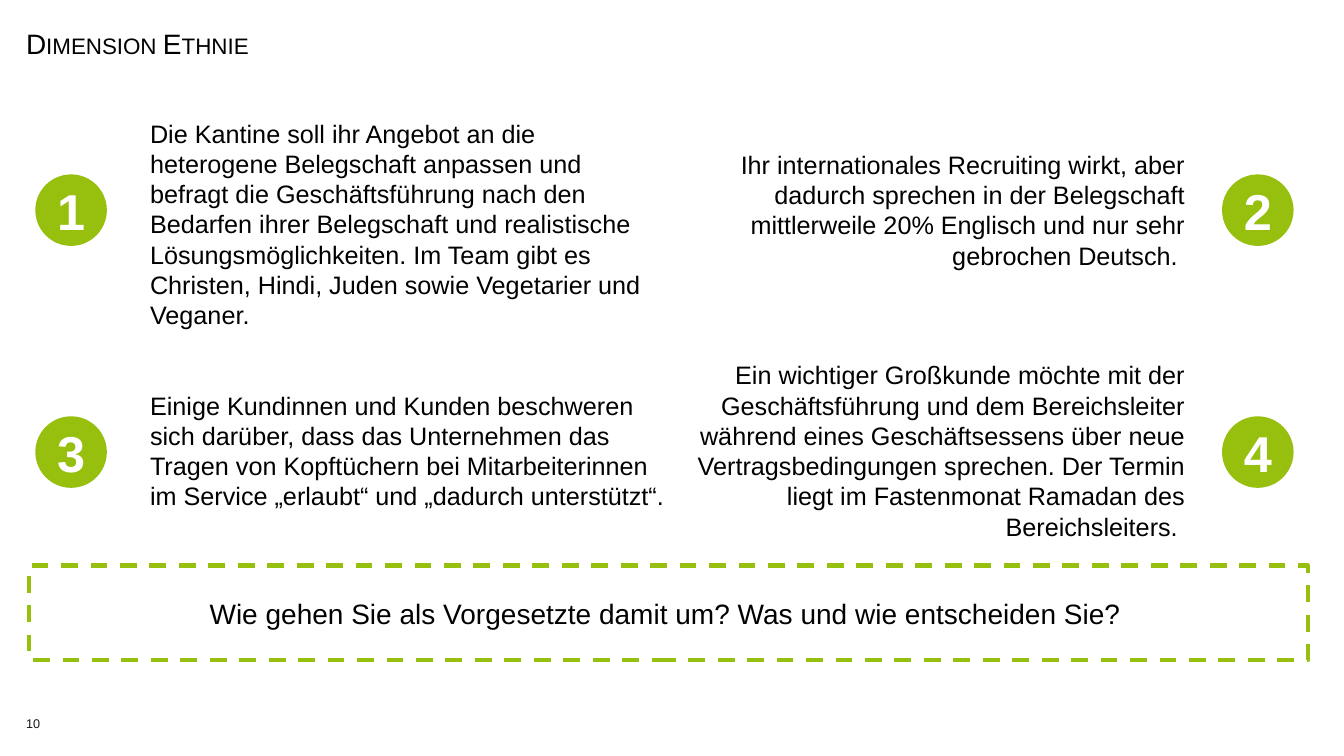
from pptx import Presentation
from pptx.dml.color import RGBColor
from pptx.enum.dml import MSO_LINE
from pptx.enum.shapes import MSO_SHAPE
from pptx.enum.text import MSO_ANCHOR, PP_ALIGN
from pptx.util import Inches, Pt

COLORS = {"green": "97BF0D", "black": "000000", "white": "FFFFFF", "number": "141616"}
CIRCLE_SIZE = 0.71
CIRCLE_LEFTS = (0.35, 12.12)
CIRCLE_TOPS = (1.73, 4.13)

CASES = [
    ("Die Kantine soll ihr Angebot an die heterogene Belegschaft anpassen und "
     "befragt die Geschäftsführung nach den Bedarfen ihrer Belegschaft und "
     "realistische Lösungsmöglichkeiten. Im Team gibt es Christen, Hindi, Juden "
     "sowie Vegetarier und Veganer.", (1.39, 1.12, 5.14, 2.22)),
    ("Ihr internationales Recruiting wirkt, aber dadurch sprechen in der "
     "Belegschaft mittlerweile 20% Englisch und nur sehr gebrochen Deutsch. ",
     (6.68, 1.43, 5.17, 1.31)),
    ("Einige Kundinnen und Kunden beschweren sich darüber, dass das Unternehmen "
     "das Tragen von Kopftüchern bei Mitarbeiterinnen im Service „erlaubt“ und "
     "„dadurch unterstützt“.", (1.39, 3.82, 5.3, 1.31)),
    ("Ein wichtiger Großkunde möchte mit der Geschäftsführung und dem "
     "Bereichsleiter während eines Geschäftsessens über neue "
     "Vertragsbedingungen sprechen. Der Termin liegt im Fastenmonat Ramadan des "
     "Bereichsleiters. ", (6.68, 3.52, 5.17, 1.92)),
]


def rgb(name):
    return RGBColor.from_string(COLORS[name])


def write_text(shape, text, size=18, color="black", bold=False, align=PP_ALIGN.LEFT,
               anchor=MSO_ANCHOR.TOP, wrap=True, inset=None, spacing=None,
               small_caps=False):
    frame = shape.text_frame
    frame.word_wrap = wrap
    frame.vertical_anchor = anchor
    if inset is not None:
        frame.margin_left = frame.margin_right = Inches(inset)
        frame.margin_top = frame.margin_bottom = Inches(inset)
    para = frame.paragraphs[0]
    para.alignment = align
    if spacing:
        para.line_spacing = spacing
    span = para.add_run()
    span.text = text
    span.font.name = "Arial"
    span.font.size = Pt(size)
    span.font.bold = bold
    span.font.color.rgb = rgb(color)
    if small_caps:
        span.font._element.set("cap", "small")


def add_text(page, bounds, text, **text_format):
    box = page.shapes.add_textbox(*map(Inches, bounds))
    write_text(box, text, **text_format)


def add_number_circle(page, left, top, number):
    circle = page.shapes.add_shape(MSO_SHAPE.OVAL, Inches(left), Inches(top),
                                   Inches(CIRCLE_SIZE), Inches(CIRCLE_SIZE))
    circle.shadow.inherit = False
    circle.fill.solid()
    circle.fill.fore_color.rgb = rgb("green")
    circle.line.fill.background()
    write_text(circle, str(number), size=36, color="white", bold=True,
               align=PP_ALIGN.CENTER, anchor=MSO_ANCHOR.MIDDLE)


def add_dashed_frame(page, bounds):
    frame = page.shapes.add_shape(MSO_SHAPE.RECTANGLE, *map(Inches, bounds))
    frame.shadow.inherit = False
    frame.fill.background()
    frame.line.color.rgb = rgb("green")
    frame.line.width = Pt(3)
    frame.line.dash_style = MSO_LINE.DASH


def main():
    deck = Presentation()
    deck.slide_width = Inches(13.33)
    deck.slide_height = Inches(7.5)
    page = deck.slides.add_slide(deck.slide_layouts[6])

    add_text(page, (0.26, 6.99, 0.5, 0.38), "10", size=9, color="number",
             anchor=MSO_ANCHOR.MIDDLE, inset=0)
    add_text(page, (0.16, 0.22, 9.37, 0.39), "Dimension Ethnie", size=20,
             anchor=MSO_ANCHOR.MIDDLE, spacing=1.1, small_caps=True)
    for index, (text, bounds) in enumerate(CASES):
        row, column = divmod(index, 2)
        add_text(page, bounds, text, align=PP_ALIGN.RIGHT if column else PP_ALIGN.LEFT)
        add_number_circle(page, CIRCLE_LEFTS[column], CIRCLE_TOPS[row], index + 1)
    add_dashed_frame(page, (0.29, 5.61, 12.68, 0.94))
    add_text(page, (1.98, 5.87, 9.38, 0.44),
             "Wie gehen Sie als Vorgesetzte damit um? Was und wie entscheiden Sie?",
             size=20, wrap=False)
    deck.save("out.pptx")


if __name__ == "__main__":
    main()
